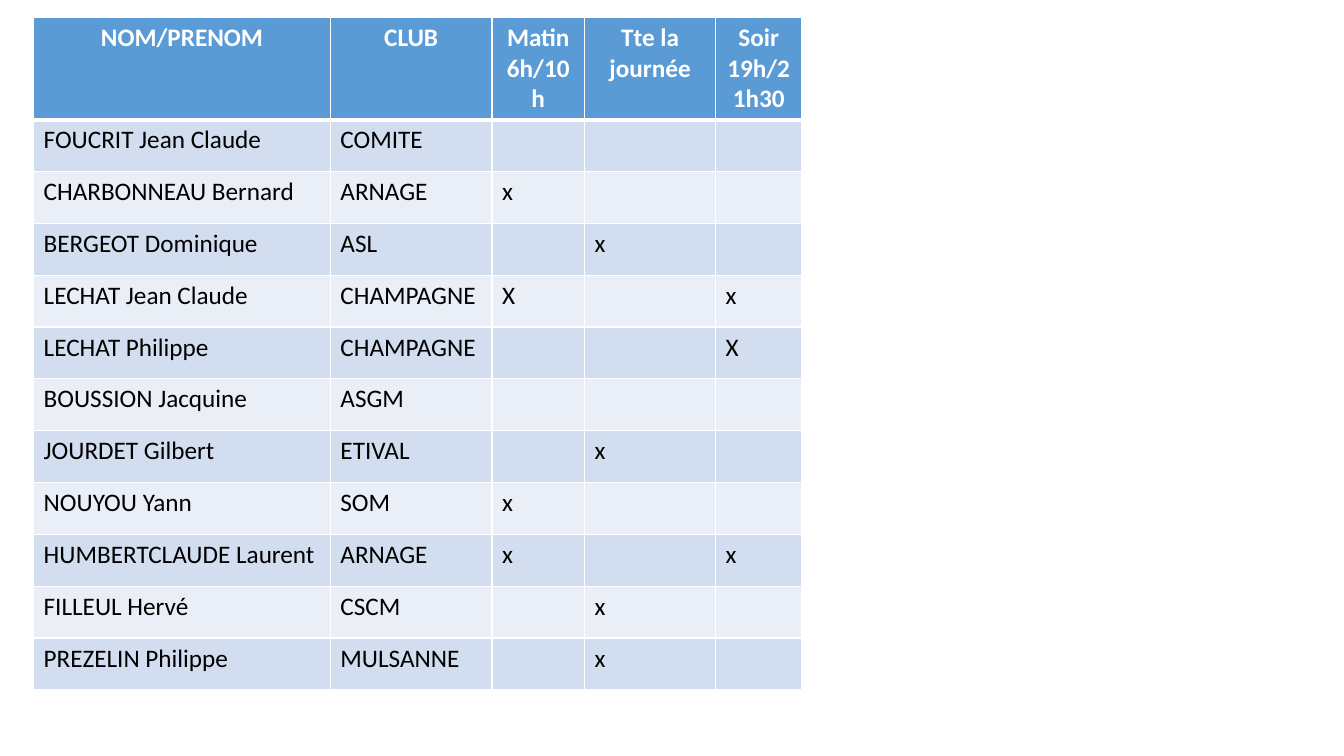
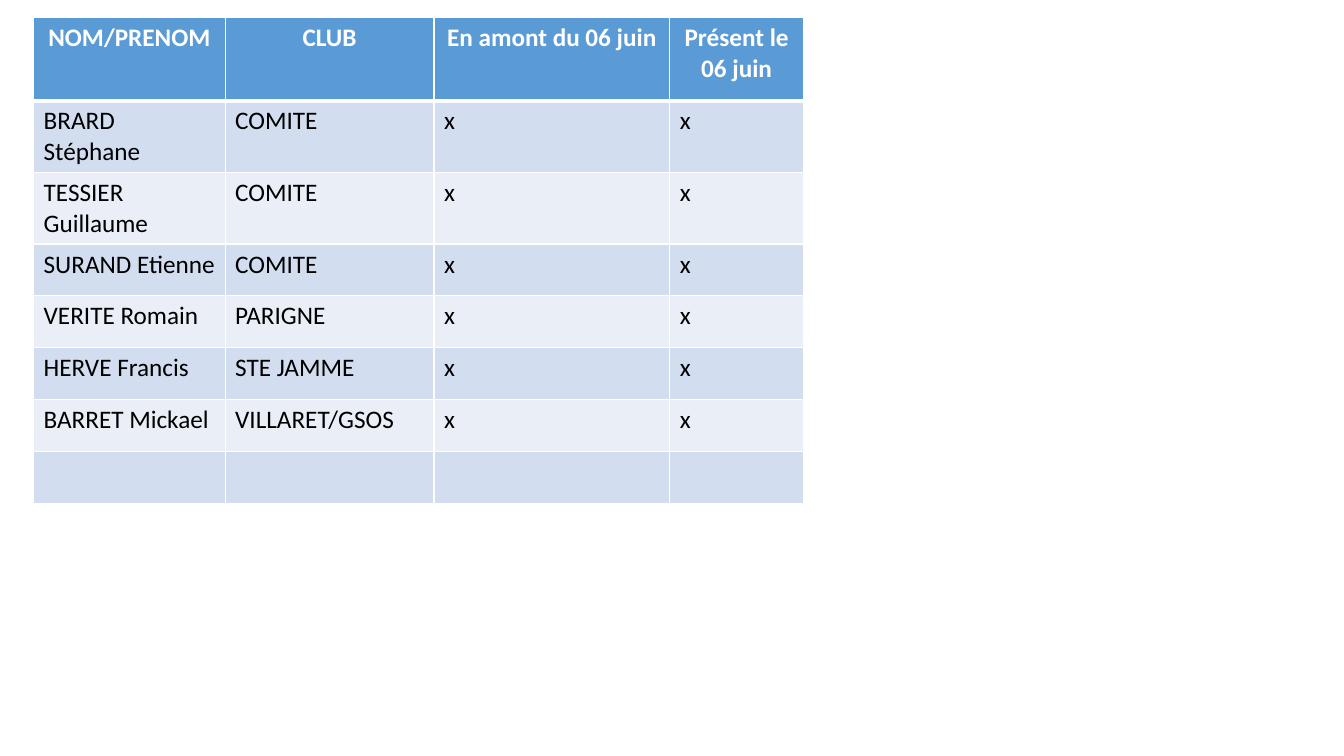
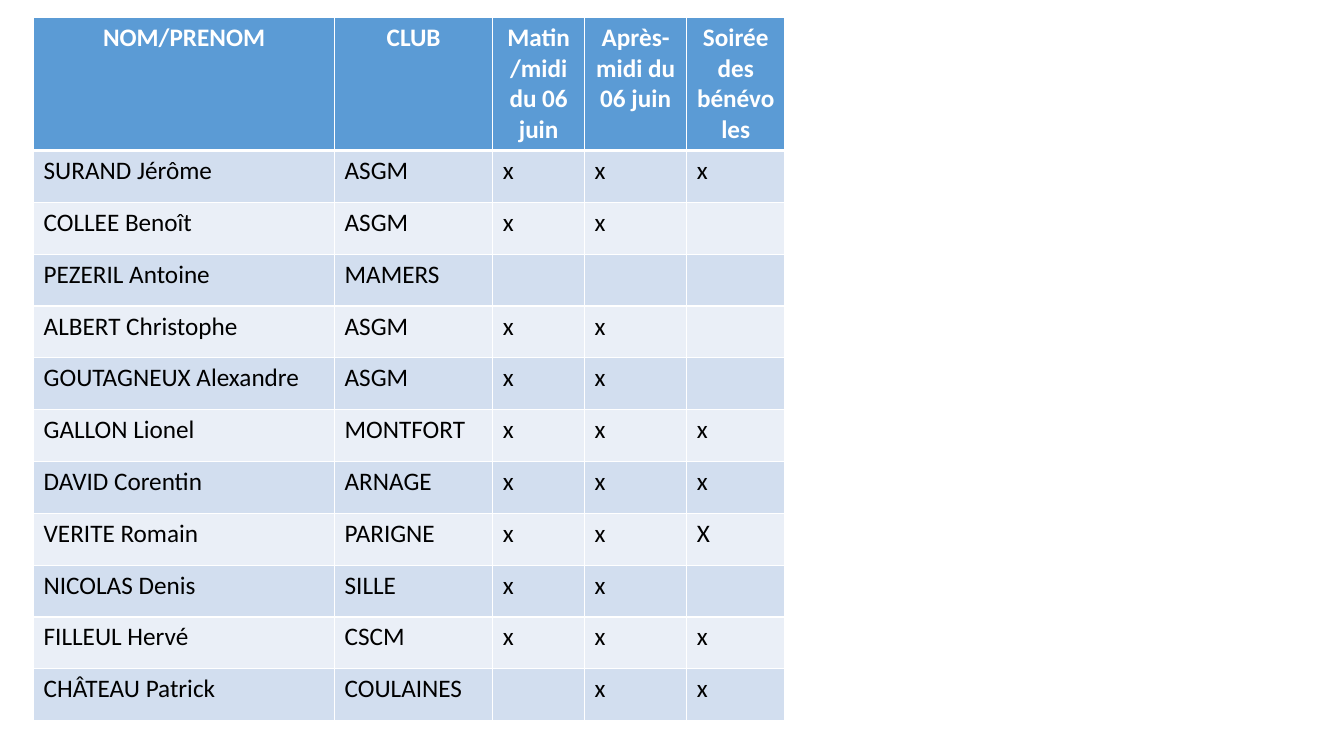
from lxml import etree
from pptx import Presentation
from pptx.dml.color import RGBColor
from pptx.enum import text
from pptx.oxml import ns
from pptx.util import Pt

# Content: header, column widths in points, then one row per volunteer
TABLES = [
    {
        "header": ["NOM/PRENOM", "CLUB", "Matin 6h/10h", "Tte la journée", "Soir 19h/21h30"],
        "widths": [212, 115.4, 66.2, 93.6, 61.6],
        "rows": [
            ("FOUCRIT Jean Claude", "COMITE", "", "", ""),
            ("CHARBONNEAU Bernard", "ARNAGE", "x", "", ""),
            ("BERGEOT Dominique", "ASL", "", "x", ""),
            ("LECHAT Jean Claude", "CHAMPAGNE", "X", "", "x"),
            ("LECHAT Philippe", "CHAMPAGNE", "", "", "X"),
            ("BOUSSION Jacquine", "ASGM", "", "", ""),
            ("JOURDET Gilbert", "ETIVAL", "", "x", ""),
            ("NOUYOU Yann", "SOM", "x", "", ""),
            ("HUMBERTCLAUDE Laurent", "ARNAGE", "x", "", "x"),
            ("FILLEUL Hervé", "CSCM", "", "x", ""),
            ("PREZELIN Philippe", "MULSANNE", "", "x", ""),
        ],
    },
    {
        "header": ["NOM/PRENOM", "CLUB", "En amont du 06 juin", "Présent le 06 juin"],
        "widths": [136.8, 149.2, 168.4, 95.6],
        "rows": [
            ("BRARD Stéphane", "COMITE", "x", "x"),
            ("TESSIER Guillaume", "COMITE", "x", "x"),
            ("SURAND Etienne", "COMITE", "x", "x"),
            ("VERITE Romain", "PARIGNE", "x", "x"),
            ("HERVE Francis", "STE JAMME", "x", "x"),
            ("BARRET Mickael", "VILLARET/GSOS", "x", "x"),
            ("", "", "", ""),
        ],
    },
    {
        "header": ["NOM/PRENOM", "CLUB", "Matin/midi du 06 juin", "Après-midi du 06 juin",
                   "Soirée des bénévoles"],
        "widths": [215, 113, 65.6, 73, 70],
        "rows": [
            ("SURAND Jérôme", "ASGM", "x", "x", "x"),
            ("COLLEE Benoît", "ASGM", "x", "x", ""),
            ("PEZERIL Antoine", "MAMERS", "", "", ""),
            ("ALBERT Christophe", "ASGM", "x", "x", ""),
            ("GOUTAGNEUX Alexandre", "ASGM", "x", "x", ""),
            ("GALLON Lionel", "MONTFORT", "x", "x", "x"),
            ("DAVID Corentin", "ARNAGE", "x", "x", "x"),
            ("VERITE Romain", "PARIGNE", "x", "x", "X"),
            ("NICOLAS Denis", "SILLE", "x", "x", ""),
            ("FILLEUL Hervé", "CSCM", "x", "x", "x"),
            ("CHÂTEAU Patrick", "COULAINES", "", "x", "x"),
        ],
    },
]

# Shared style
COLORS = {"header": "5B9BD5", "odd": "D2DEEF", "even": "EAEFF7",
          "white": "FFFFFF", "black": "000000"}
FONT, FONT_SIZE = "Calibri", 18
LEFT, TOP = 24, 12.4
HEADER_HEIGHT, ROW_HEIGHT = 59.6, 37.04
THIN, THICK = 1, 3


def color(name):
    return RGBColor.from_string(COLORS[name])


def set_borders(cell, top, bottom):
    """Draw white borders; they must come before the fill in the cell properties."""
    properties = cell._tc.get_or_add_tcPr()
    sides = {"lnL": THIN, "lnR": THIN, "lnT": top, "lnB": bottom}
    for position, (side, width) in enumerate(sides.items()):
        line = etree.Element(ns.qn(f"a:{side}"), w=str(Pt(width)))
        fill = etree.SubElement(line, ns.qn("a:solidFill"))
        etree.SubElement(fill, ns.qn("a:srgbClr"), val=COLORS["white"])
        properties.insert(position, line)


def fill_cell(cell, value, row):
    is_header = row == 0
    cell.fill.solid()
    cell.fill.fore_color.rgb = color("header" if is_header else "odd" if row % 2 else "even")
    set_borders(cell, THICK if row == 1 else THIN, THICK if is_header else THIN)
    paragraph = cell.text_frame.paragraphs[0]
    paragraph.text = value
    paragraph.alignment = text.PP_ALIGN.CENTER if is_header else text.PP_ALIGN.LEFT
    for run in paragraph.runs:
        run.font.name, run.font.size = FONT, Pt(FONT_SIZE)
        run.font.bold = is_header
        run.font.color.rgb = color("white" if is_header else "black")


def add_schedule(slide, header, widths, rows):
    heights = [HEADER_HEIGHT] + [ROW_HEIGHT] * len(rows)
    table = slide.shapes.add_table(len(heights), len(widths), Pt(LEFT), Pt(TOP),
                                   Pt(sum(widths)), Pt(sum(heights))).table
    table.horz_banding = False
    for column, width in zip(table.columns, widths):
        column.width = Pt(width)
    for row, (values, height) in enumerate(zip([header, *rows], heights)):
        table.rows[row].height = Pt(height)
        for column, value in enumerate(values):
            fill_cell(table.cell(row, column), value, row)


def main():
    presentation = Presentation()
    presentation.slide_width, presentation.slide_height = Pt(960), Pt(540)
    for schedule in TABLES:
        slide = presentation.slides.add_slide(presentation.slide_layouts[6])
        add_schedule(slide, **schedule)
    presentation.save("out.pptx")


if __name__ == "__main__":
    main()
